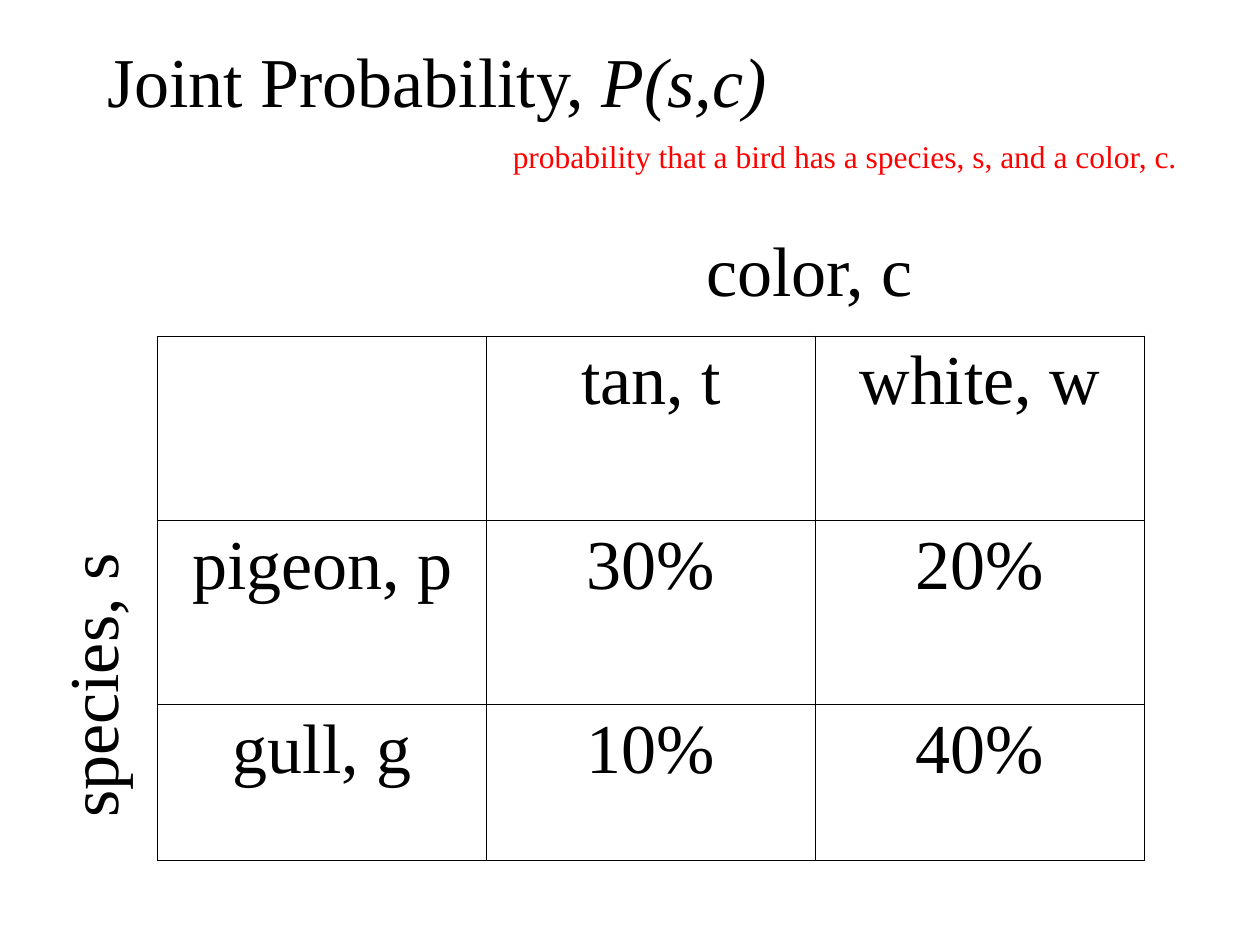
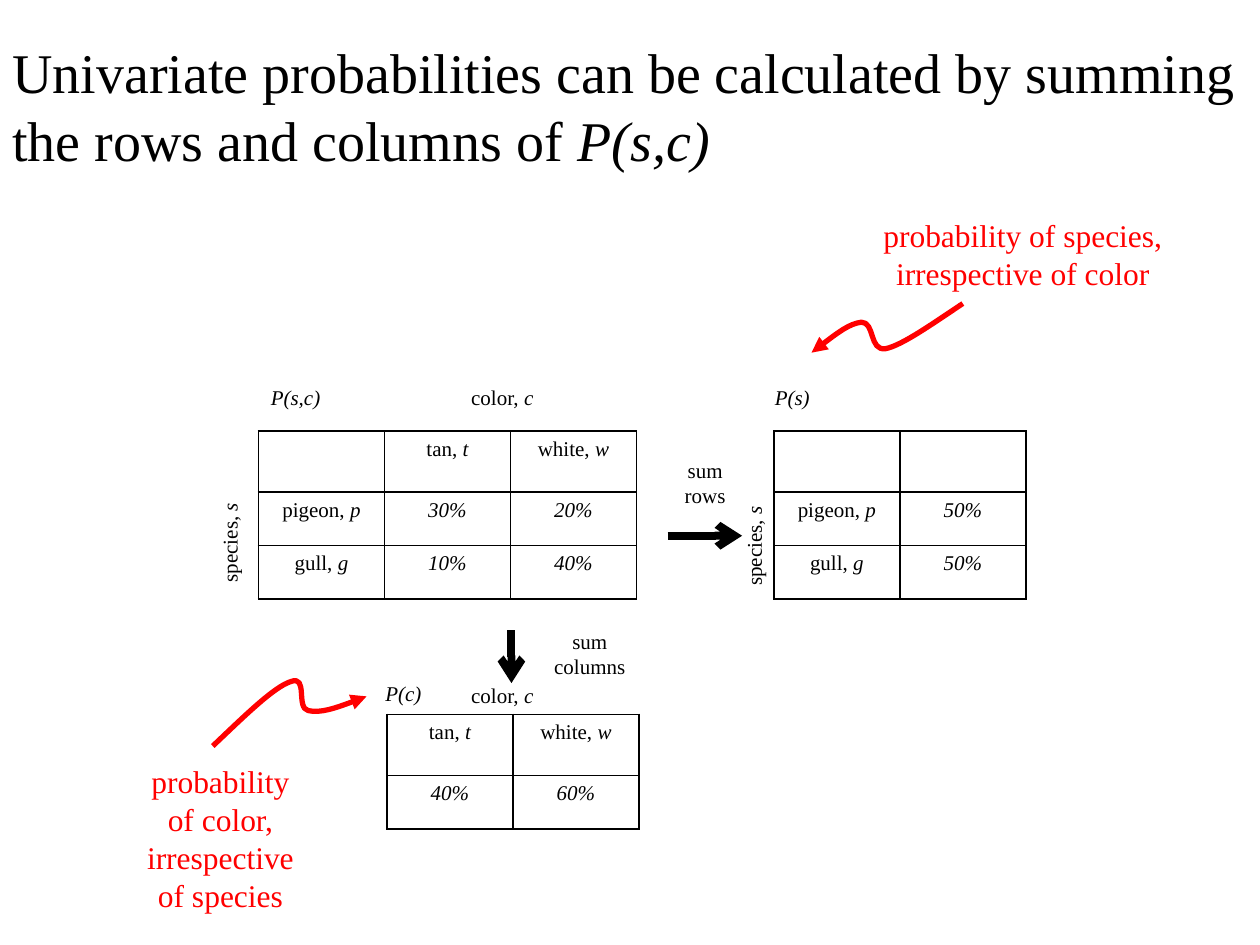
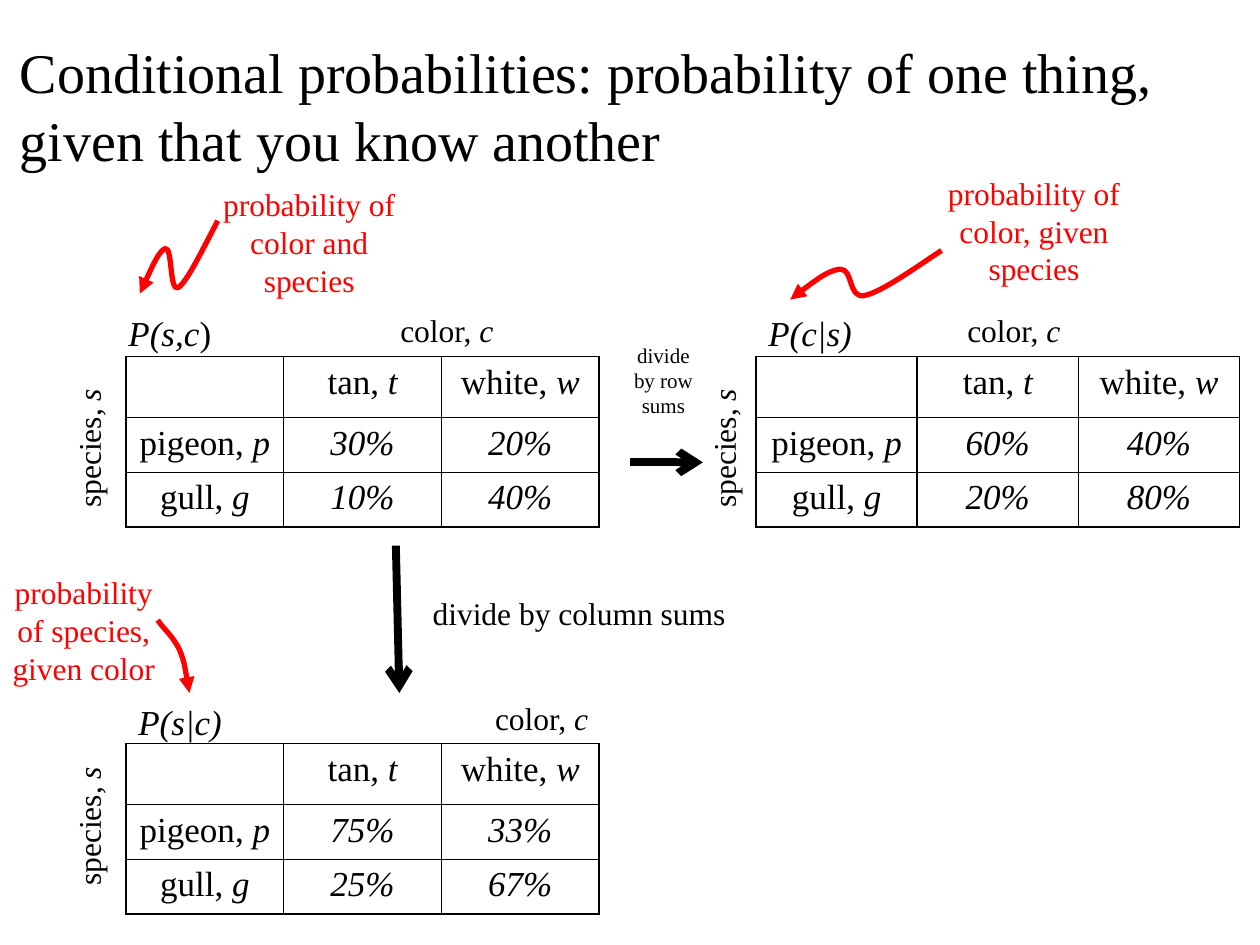
from lxml.etree import SubElement
from pptx import Presentation
from pptx.dml.color import RGBColor
from pptx.enum.shapes import MSO_CONNECTOR
from pptx.enum.text import MSO_AUTO_SIZE, PP_ALIGN as Align
from pptx.oxml import parse_xml
from pptx.oxml.ns import nsdecls, qn
from pptx.util import Cm, Pt

# Shared look; all lengths are in centimetres
COLORS = {"ink": "000000", "note": "FF0000"}
FONT = "Times New Roman"
TITLE_TOP = 0.64
ROW_HEIGHTS = [1.23, 1.08, 1.08]

# Shared wording; asterisks enclose italics
COLOR_AXIS = "color, *c*"
SPECIES_AXIS = "species, *s*"
COLOR_NAMES = ["tan, *t*", "white, *w*"]
SPECIES_NAMES = ["pigeon, *p*", "gull, *g*"]

# Bezier points of the note arrows, tail to head, as fractions of their box
SQUIGGLE = [(1, 0), (0.8, 0.41), (0.6, 0.85), (0.49, 0.92), (0.38, 0.97),
            (0.42, 0.38), (0.33, 0.38), (0.25, 0.41), (0.13, 0.69), (0, 1)]
SWEEP = [(0, 1), (0.2, 0.59), (0.4, 0.16), (0.51, 0.09), (0.62, 0),
         (0.54, 0.46), (0.62, 0.5), (0.7, 0.54), (0.85, 0.43), (1, 0.3)]
BEND = [(0, 0), (0.12, 0.09), (0.48, 0.22), (0.68, 0.4), (0.84, 0.57),
        (0.88, 0.71), (1, 1)]


def rgb(name):
    return RGBColor.from_string(COLORS[name])


def plain(text):
    return text.replace("*", "")


def percent(value):
    return f"*{value}%*"


def write(paragraph, text, size, color="ink"):
    """Add runs, switching italics at every asterisk."""
    for index, part in enumerate(text.split("*")):
        if part:
            run = paragraph.add_run()
            run.text = part
            run.font.name = FONT
            run.font.size = Pt(size)
            run.font.italic = index % 2 == 1
            run.font.color.rgb = rgb(color)


def add_label(slide, text, left, top, width, size, lines=1, align=Align.LEFT,
              color="ink", rotation=0):
    height = 0.25 + 0.0423 * size * lines
    box = slide.shapes.add_textbox(Cm(left), Cm(top), Cm(width), Cm(height))
    box.rotation = rotation
    frame = box.text_frame
    frame.word_wrap = True
    frame.auto_size = MSO_AUTO_SIZE.SHAPE_TO_FIT_TEXT
    frame.paragraphs[0].alignment = align
    write(frame.paragraphs[0], text, size, color)


def add_title(slide, text, left, width, size=32, lines=2):
    add_label(slide, text, left, TITLE_TOP, width, size, lines)


def add_note(slide, text, left, top, width, lines):
    add_label(slide, text, left, top, width, 18, lines, Align.CENTER, "note")


def style_cell(cell):
    """Clear the fill and draw a thin line on all four sides."""
    cell.fill.background()
    properties = cell._tc.get_or_add_tcPr()
    for index, side in enumerate("LRTB"):
        properties.insert(index, parse_xml(
            f'<a:ln{side} {nsdecls("a")} w="12700"><a:solidFill>'
            f'<a:srgbClr val="{COLORS["ink"]}"/></a:solidFill></a:ln{side}>'))


def add_grid(slide, rows, left, top, column_width, size, heights=ROW_HEIGHTS):
    heights = heights[:len(rows)]
    columns = len(rows[0])
    table = slide.shapes.add_table(
        len(rows), columns, Cm(left), Cm(top),
        Cm(column_width * columns), Cm(sum(heights))).table
    table.first_row = table.horz_banding = False
    for column in table.columns:
        column.width = Cm(column_width)
    for row, height, texts in zip(table.rows, heights, rows):
        row.height = Cm(height)
        for cell, text in zip(row.cells, texts):
            style_cell(cell)
            paragraph = cell.text_frame.paragraphs[0]
            paragraph.alignment = Align.CENTER
            write(paragraph, text, size)


def species_rows(header, pigeon, gull):
    """Rows with a header line and the species names in the first column."""
    rows = [["", *header]]
    for name, values in zip(SPECIES_NAMES, (pigeon, gull)):
        rows.append([name, *map(percent, values)])
    return rows


def style_line(shape, color, width, head):
    shape.line.color.rgb = rgb(color)
    shape.line.width = Pt(width)
    SubElement(shape._element.spPr.find(qn("a:ln")), qn("a:tailEnd"), type=head)


def add_arrow(slide, x1, y1, x2, y2):
    arrow = slide.shapes.add_connector(
        MSO_CONNECTOR.STRAIGHT, Cm(x1), Cm(y1), Cm(x2), Cm(y2))
    style_line(arrow, "ink", 4.5, "arrow")
    SubElement(arrow._element.spPr, qn("a:effectLst"))


def add_curve(slide, curve, left, top, width, height):
    """Draw a curved note arrow that fills the given box."""
    points = [(Cm(left + x * width), Cm(top + y * height)) for x, y in curve]
    builder = slide.shapes.build_freeform(*points[0], scale=1.0)
    builder.add_line_segments(points[1:], close=False)
    shape = builder.convert_to_shape()
    shape.shadow.inherit = False
    shape.fill.background()
    style_line(shape, "note", 3, "triangle")
    # Merge each three straight segments into one Bezier segment
    segments = list(shape._element.iter(qn("a:lnTo")))
    outline = segments[0].getparent()
    for start in range(0, len(segments), 3):
        bezier = SubElement(outline, qn("a:cubicBezTo"))
        for segment in segments[start:start + 3]:
            bezier.append(segment[0])
            outline.remove(segment)


def build_joint(slide):
    rows = species_rows(COLOR_NAMES, (30, 20), (10, 40))
    add_grid(slide, [[plain(text) for text in row] for row in rows],
             3.18, 6.78, 6.63, 40, [3.71, 3.71, 3.15])
    add_label(slide, plain(COLOR_AXIS), 9.73, 4.45, 13.18, 40, align=Align.CENTER)
    add_label(slide, plain(SPECIES_AXIS), -1.85, 12.85, 7.34, 40,
              align=Align.CENTER, rotation=270)
    add_title(slide, "Joint Probability, *P(s,c)*", 1.91, 19.69, 40, 1)
    add_note(slide, "probability that a bird has a species, s, and a color, c.",
             9.73, 2.64, 14.61, 1)


def build_univariate(slide):
    add_title(slide, "Univariate probabilities can be calculated by summing "
              "the rows and columns of *P(s,c)*", 0, 25.4)

    # Joint table and its two sums
    add_grid(slide, species_rows(COLOR_NAMES, (30, 20), (10, 40)),
             5.21, 8.69, 2.54, 12)
    add_grid(slide, species_rows([""], [50], [50]), 15.6, 8.69, 2.54, 12)
    add_grid(slide, [COLOR_NAMES, [percent(40), percent(60)]],
             7.8, 14.4, 2.54, 12)

    # Names of the tables and axes
    for text, left, top in [("*P(s,c)*", 5.21, 7.62), ("*P(s)*", 15.37, 7.62),
                            ("*P(c)*", 7.52, 13.59), (COLOR_AXIS, 9.25, 7.62),
                            (COLOR_AXIS, 9.25, 13.64)]:
        add_label(slide, text, left, top, 1.91, 12)
    for left, top in [(3.35, 10.34), (13.92, 10.41)]:
        add_label(slide, SPECIES_AXIS, left, top, 2.54, 12, rotation=270)

    # Summing steps
    add_arrow(slide, 13.46, 10.8, 14.96, 10.8)
    add_label(slide, "sum rows", 13.26, 9.09, 1.91, 12, 2, Align.CENTER)
    add_arrow(slide, 10.31, 12.7, 10.31, 13.77)
    add_label(slide, "sum columns", 10.72, 12.55, 2.34, 12, 2, Align.CENTER)

    # Red notes
    add_note(slide, "probability of species, irrespective of color",
             16.71, 4.24, 7.82, 2)
    add_curve(slide, SQUIGGLE, 16.36, 6.12, 3.05, 0.99)
    add_note(slide, "probability of color, irrespective of species",
             2.54, 15.24, 3.81, 4)
    add_curve(slide, SWEEP, 4.29, 13.61, 3.1, 1.43)


def build_conditional(slide):
    add_title(slide, "Conditional probabilities: probability of one thing, "
              "given that you know another", 0.15, 24.97)

    # Joint table and the two conditional ones
    for pigeon, gull, left, top, column_width in [
            ((30, 20), (10, 40), 2.54, 7.19, 3.18),
            ((60, 40), (20, 80), 15.24, 7.19, 3.25),
            ((75, 33), (25, 67), 2.54, 14.99, 3.18)]:
        add_grid(slide, species_rows(COLOR_NAMES, pigeon, gull),
                 left, top, column_width, 20)

    # Names of the tables and axes
    for text, left, top in [("*P(s,c*)", 2.34, 6.15), ("*P(c|s)*", 15.24, 6.15),
                            ("*P(s|c)*", 2.54, 14)]:
        add_label(slide, text, left, top, 3.18, 20)
    for left, top in [(7.82, 6.15), (19.25, 6.15), (9.73, 13.97)]:
        add_label(slide, COLOR_AXIS, left, top, 3.18, 18)
    for left, top in [(0.23, 8.43), (13.03, 8.43), (0.23, 16.05)]:
        add_label(slide, SPECIES_AXIS, left, top, 3.1, 18, rotation=270)

    # Dividing steps
    add_arrow(slide, 12.7, 9.32, 14.17, 9.32)
    add_label(slide, "divide by row sums", 12.42, 6.78, 1.91, 12, 3, Align.CENTER)
    add_arrow(slide, 7.98, 11, 8.05, 13.97)
    add_label(slide, "divide by column sums", 8.26, 11.86, 6.83, 18,
              align=Align.CENTER)

    # Red notes
    add_note(slide, "probability of color, given species", 18.62, 3.38, 4.45, 3)
    add_curve(slide, SQUIGGLE, 15.93, 5.05, 3.05, 0.99)
    add_note(slide, "probability of species, given color", 0, 11.43, 3.38, 3)
    add_curve(slide, BEND, 3.18, 12.5, 0.64, 1.47)
    add_note(slide, "probability of color and species", 4.01, 3.61, 4.45, 3)
    add_curve(slide, SQUIGGLE, 2.82, 4.45, 1.57, 1.47)


def main():
    presentation = Presentation()
    presentation.slide_width = Cm(25.4)
    presentation.slide_height = Cm(19.05)
    blank = presentation.slide_layouts[6]
    for build in (build_joint, build_univariate, build_conditional):
        build(presentation.slides.add_slide(blank))
    presentation.save("out.pptx")


if __name__ == "__main__":
    main()
